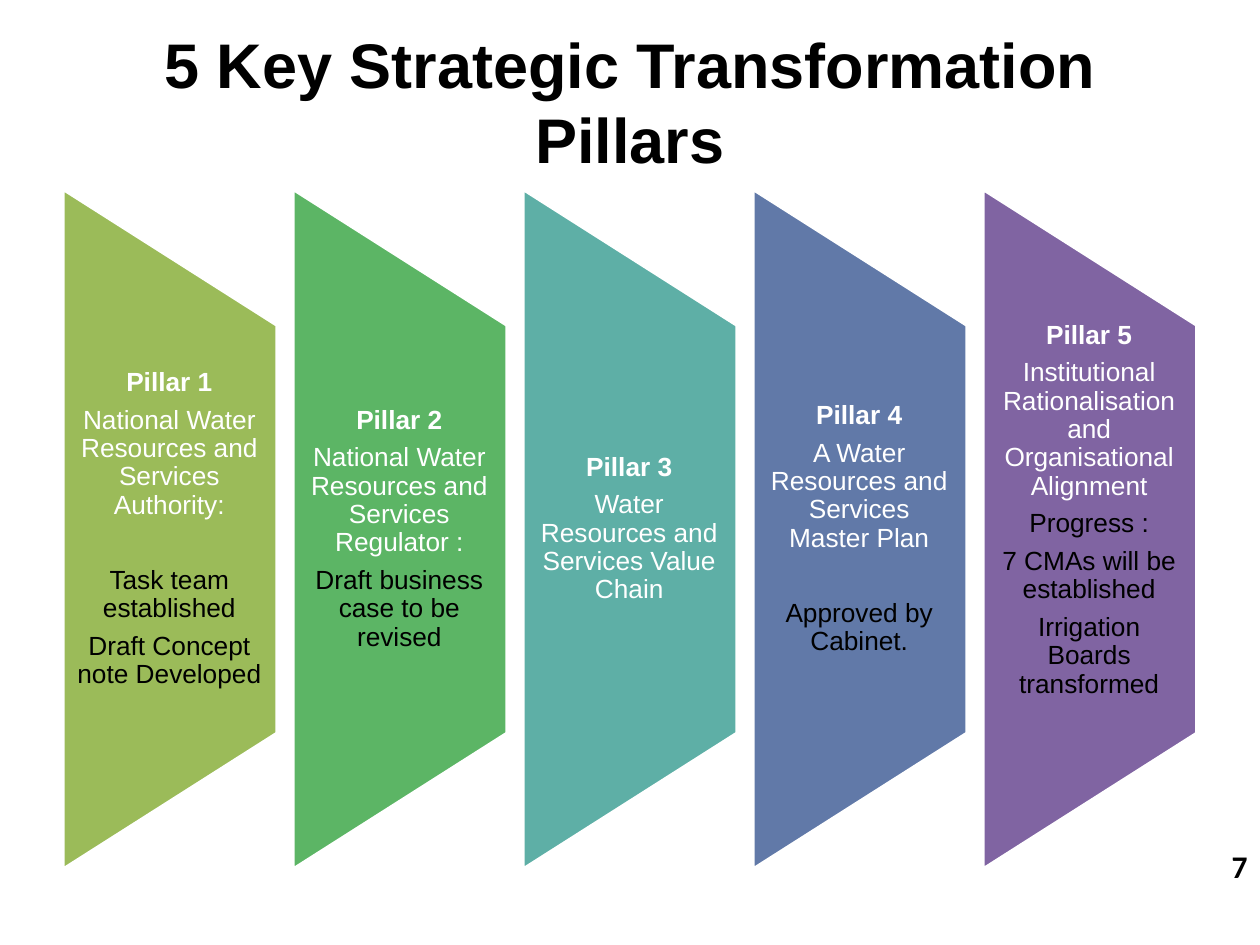
from pptx import Presentation
from pptx.dml.color import RGBColor
from pptx.enum.shapes import MSO_SHAPE
from pptx.enum.text import MSO_ANCHOR, PP_ALIGN
from pptx.util import Inches, Pt

WHITE, BLACK = "FFFFFF", "000000"
LEFT, SPAN, COL = 0.05, 0.9, 0.17  # shares of the slide width
TOP, HEIGHT = 0.2, 0.72  # shares of the slide height
GAP, WIDE_GAP = 5.25, 26.6  # points after a paragraph

# fill, name, description, progress notes, space before the notes, bottom inset
PILLARS = [
    ("9BBB59", "Pillar 1", "National Water Resources and Services Authority:",
     ["Task team established", "Draft Concept note Developed"], WIDE_GAP, 0),
    ("5CB565", "Pillar 2", "National Water Resources and Services Regulator :",
     ["Draft business case to be revised"], GAP, 0),
    ("5EAFA6", "Pillar 3", "Water Resources and Services Value Chain", [], GAP, 0),
    ("6179A8", "Pillar 4", "A Water Resources and Services Master Plan",
     ["Approved by Cabinet."], WIDE_GAP, 0),
    ("8064A2", "Pillar 5",
     "Institutional Rationalisation and Organisational Alignment",
     ["Progress :", "7 CMAs will be established", "Irrigation Boards transformed"],
     GAP, 0.3),
]


def rgb(color):
    return RGBColor.from_string(color)


class Deck:
    """Style and current slide; positions are shares of the slide size."""

    font = "Arial"

    def __init__(self, width, height):
        self.prs = Presentation()
        self.prs.slide_width = Inches(width)
        self.prs.slide_height = Inches(height)
        self.s = self.prs.slides.add_slide(self.prs.slide_layouts[5])

    def box(self, x, y, w, h):
        sw, sh = self.prs.slide_width, self.prs.slide_height
        return round(x * sw), round(y * sh), round(w * sw), round(h * sh)

    def set_text(self, p, text, size, color, bold=False, align=PP_ALIGN.CENTER, font=None):
        p.text = text
        p.alignment = align
        for r in p.runs:
            r.font.name = font or self.font
            r.font.size = Pt(size)
            r.font.bold = bold
            r.font.color.rgb = rgb(color)

    def title(self, text, x, y, w, h):
        sp = self.s.shapes.title
        sp.left, sp.top, sp.width, sp.height = self.box(x, y, w, h)
        tf = sp.text_frame
        tf.word_wrap = True
        tf.vertical_anchor = MSO_ANCHOR.TOP
        self.set_text(tf.paragraphs[0], text, 36, BLACK, bold=True)

    def text_box(self, x, y, w, h):
        tf = self.s.shapes.add_textbox(*self.box(x, y, w, h)).text_frame
        tf.word_wrap = True
        return tf

    def trapezoid(self, x, y, w, h, fill):
        """Draw an upright trapezoid, tall side left, by turning a wide one."""
        left, top, width, height = self.box(x, y, w, h)
        turn = (height - width) // 2
        sp = self.s.shapes.add_shape(MSO_SHAPE.FLOWCHART_MANUAL_OPERATION,
                                     left - turn, top + turn, height, width)
        sp.rotation = 270
        sp.shadow.inherit = False
        sp.fill.solid()
        sp.fill.fore_color.rgb = rgb(fill)
        sp.line.color.rgb = rgb(WHITE)
        sp.line.width = Pt(2)

    def pillar(self, x, fill, name, description, notes, note_gap, bottom):
        self.trapezoid(x, TOP, COL, HEIGHT, fill)
        tf = self.text_box(x, TOP + HEIGHT / 5, COL, HEIGHT * 3 / 5)
        tf.vertical_anchor = MSO_ANCHOR.MIDDLE
        tf.margin_left, tf.margin_right = Inches(0.1), Inches(0.11)
        tf.margin_top, tf.margin_bottom = 0, Inches(bottom)
        lines = [(name, WHITE, True, GAP), (description, WHITE, False, note_gap)]
        lines += [(note, BLACK, False, GAP) for note in notes]
        for i, (text, color, bold, after) in enumerate(lines):
            p = tf.add_paragraph() if i else tf.paragraphs[0]
            self.set_text(p, text, 15, color, bold)
            p.line_spacing = 0.9
            p.space_after = Pt(after)

    def page_number(self, text, x, y, w, h):
        tf = self.text_box(x, y, w, h)
        self.set_text(tf.paragraphs[0], text, 18, BLACK, True, PP_ALIGN.RIGHT, "Calibri")


def main():
    deck = Deck(10, 7.5)
    deck.title("5 Key Strategic Transformation Pillars", LEFT, 0.02, SPAN, 0.11)
    pitch = (SPAN - COL) / (len(PILLARS) - 1)
    for i, pillar in enumerate(PILLARS):
        deck.pillar(LEFT + i * pitch, *pillar)
    deck.page_number("7", 0.77, 0.89, 0.23, 0.05)
    deck.prs.save("out.pptx")


if __name__ == "__main__":
    main()
